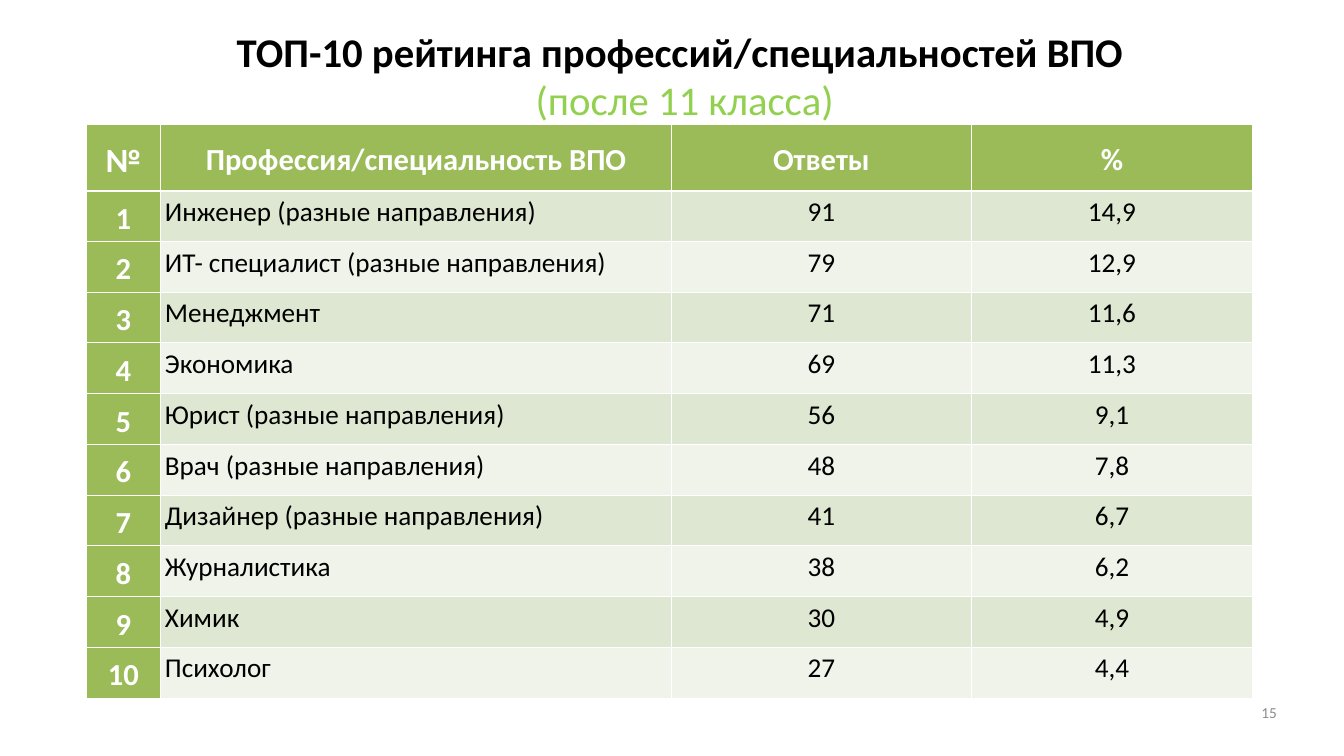
from lxml.etree import SubElement
from pptx import Presentation
from pptx.dml.color import RGBColor
from pptx.enum.text import MSO_ANCHOR as Anchor, PP_ALIGN as Align
from pptx.oxml.ns import qn
from pptx.util import Inches, Pt

FONT = "Calibri"
GREEN, LIME, WHITE, BLACK, GREY = "9BBB59", "92D050", "FFFFFF", "000000", "8C8C8C"
BANDS = ("DEE7D1", "EFF3EA")
HEADINGS = ("№", "Профессия/специальность ВПО", "Ответы", "%")
PROFESSIONS = (
    ("Инженер (разные направления)", "91", "14,9"),
    ("ИТ- специалист (разные направления)", "79", "12,9"),
    ("Менеджмент", "71", "11,6"),
    ("Экономика", "69", "11,3"),
    ("Юрист (разные направления)", "56", "9,1"),
    ("Врач (разные направления)", "48", "7,8"),
    ("Дизайнер (разные направления)", "41", "6,7"),
    ("Журналистика", "38", "6,2"),
    ("Химик", "30", "4,9"),
    ("Психолог", "27", "4,4"),
)
COLUMN_SHARES = (5.55, 38.02, 22.28, 20.96)
HEADER_SHARE, ROW_SHARE = 8.81, 6.71

presentation = Presentation()
presentation.slide_width, presentation.slide_height = Inches(21.99), Inches(12.37)
slide = presentation.slides.add_slide(presentation.slide_layouts[6])


def style_text(paragraph, alignment, *looks):
    """Align a paragraph and give each run its (size, colour, bold)."""
    paragraph.alignment = alignment
    for run, (size, color, bold) in zip(paragraph.runs, looks):
        run.font.name, run.font.size, run.font.bold = FONT, Pt(size), bold
        run.font.fill.solid()
        run.font.fill.fore_color.rgb = RGBColor.from_string(color)


def place(left, top, width, height):
    """Turn percentages of the slide into lengths."""
    across, down = presentation.slide_width / 100, presentation.slide_height / 100
    return int(left * across), int(top * down), int(width * across), int(height * down)


# Title and slide number
for text, box, alignment, looks in (
    ("ТОП-10 рейтинга профессий/специальностей ВПО \v(после 11 класса)",
     (6.41, 3.48, 89.09, 13.1), Align.CENTER, ((48, BLACK, True), (48, LIME, False))),
    ("15", (71.99, 92.97, 23.01, 5.01), Align.RIGHT, ((18, GREY, False),)),
):
    frame = slide.shapes.add_textbox(*place(*box)).text_frame
    frame.word_wrap = True
    frame.margin_left = frame.margin_right = frame.margin_top = frame.margin_bottom = 0
    frame.paragraphs[0].text = text
    style_text(frame.paragraphs[0], alignment, *looks)

# Rating table
rows = [HEADINGS] + [(str(rank), *row) for rank, row in enumerate(PROFESSIONS, 1)]
row_shares = [HEADER_SHARE] + [ROW_SHARE] * len(PROFESSIONS)
table_box = place(6.41, 16.41, sum(COLUMN_SHARES), sum(row_shares))
table = slide.shapes.add_table(len(rows), len(HEADINGS), *table_box).table
for column, share in zip(table.columns, COLUMN_SHARES):
    column.width = place(0, 0, share, 0)[2]
for table_row, share in zip(table.rows, row_shares):
    table_row.height = place(0, 0, 0, share)[3]

for row_index, row in enumerate(rows):
    for column_index, text in enumerate(row):
        is_header, is_rank = row_index == 0, column_index == 0
        strong = is_header or is_rank
        cell = table.cell(row_index, column_index)
        cell.margin_left = cell.margin_right = Inches(0.07)
        cell.margin_top = cell.margin_bottom = 0
        cell.vertical_anchor = Anchor.MIDDLE if strong else Anchor.TOP

        properties = cell._tc.get_or_add_tcPr()
        for side in ("lnL", "lnR", "lnT", "lnB"):
            thick = (is_header and side == "lnB") or (row_index == 1 and side == "lnT")
            line = SubElement(properties, qn(f"a:{side}"), w=str(Pt(3 if thick else 1)))
            SubElement(SubElement(line, qn("a:solidFill")), qn("a:srgbClr"), val=WHITE)
        cell.fill.solid()
        fill_color = GREEN if strong else BANDS[(row_index - 1) % 2]
        cell.fill.fore_color.rgb = RGBColor.from_string(fill_color)

        paragraph = cell.text_frame.paragraphs[0]
        paragraph.text = text
        paragraph.line_spacing = 1.15
        size = 40 if is_header and is_rank else 36 if strong else 32
        alignment = Align.LEFT if column_index == 1 and not is_header else Align.CENTER
        style_text(paragraph, alignment, (size, WHITE if strong else BLACK, strong))

presentation.save("out.pptx")
